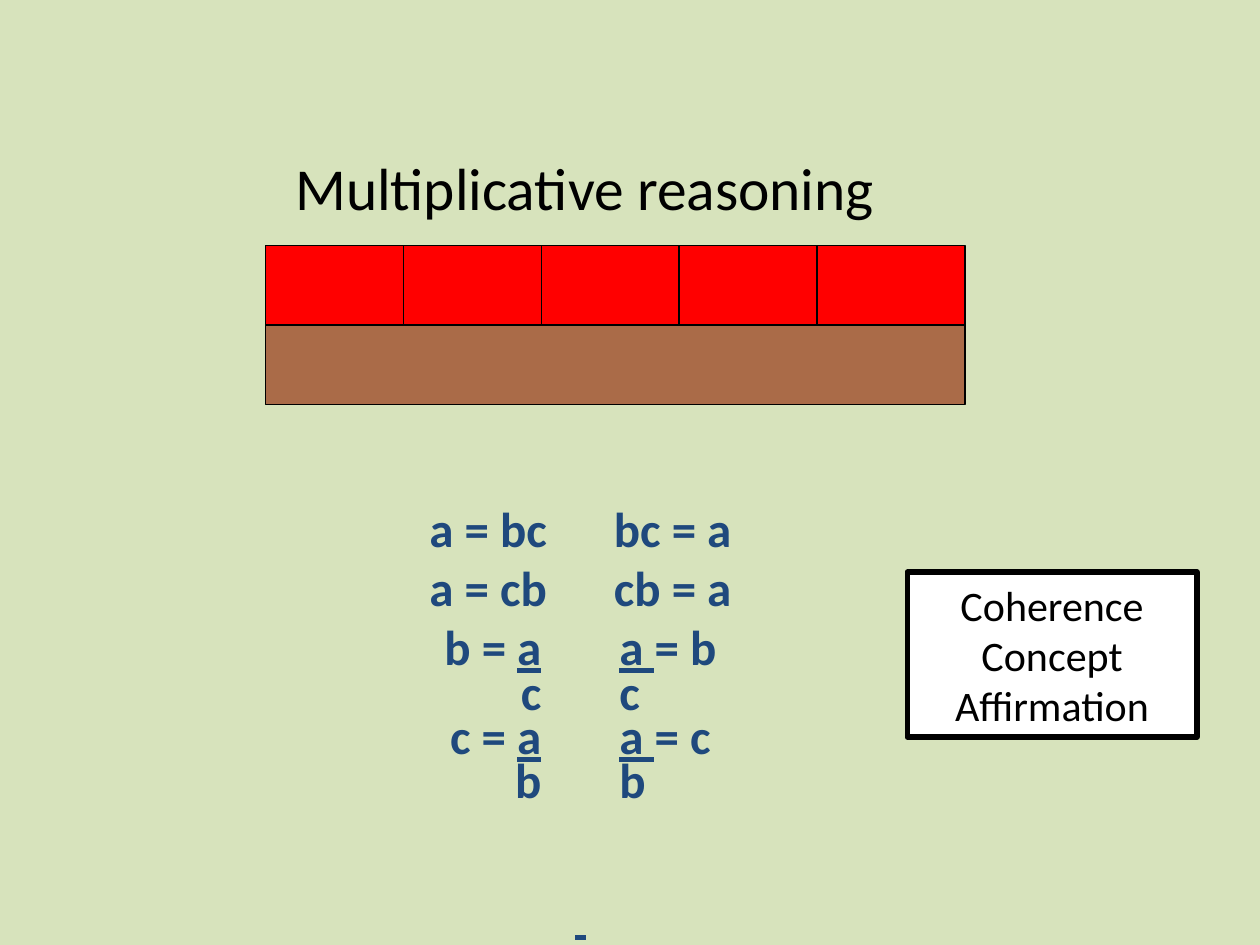
from dataclasses import dataclass

from lxml import etree
from pptx import Presentation
from pptx.dml.color import RGBColor
from pptx.enum import shapes, text
from pptx.oxml import ns
from pptx.util import Pt


@dataclass(frozen=True)
class Theme:
    font: str = "Calibri"
    back: str = "D7E3BC"
    ink: str = "000000"
    math: str = "1F497D"
    red: str = "FF0000"
    brown: str = "AA6B48"
    white: str = "FFFFFF"
    title: int = 34
    sums: int = 28
    note: int = 24


THEME = Theme()
MID = 172.8  # centre of the equations, from the text's left edge
NEAR, FAR = 19.2, 22.3  # half gap between the columns

# (left side, right side, half gap, line spacing); underscores mark underlines
SUMS = [
    ("a = bc", "bc = a", NEAR, 1),
    ("a = cb", "cb = a", NEAR, 1),
    ("b = _a_", "_a _= b", FAR, 1),
    ("c", "c", FAR, 0.75),
    ("c = _a_", "_a _= c", FAR, 0.75),
    ("b", "b", FAR, 0.75),
]


def color(code):
    return RGBColor.from_string(code)


def style(para, size, ink, bold=False):
    font = para.font
    font.name, font.size, font.bold = THEME.font, Pt(size), bold
    font.color.rgb = color(ink)


def add_runs(para, line):
    """Add runs, underlining every part that stands between underscores."""
    for i, part in enumerate(line.split("_")):
        if part:
            run = para.add_run()
            run.text = part
            if i % 2:
                run.font.underline = True


def add_tabs(para, stops):
    props = para._p.get_or_add_pPr()
    tabs = etree.SubElement(props, ns.qn("a:tabLst"))
    for pos, align in stops:
        etree.SubElement(tabs, ns.qn("a:tab"), pos=str(Pt(pos)), algn=align)


def add_text(slide, left, top, width, height):
    frame = slide.shapes.add_textbox(
        Pt(left), Pt(top), Pt(width), Pt(height)).text_frame
    frame.word_wrap = True
    return frame


def add_box(slide, left, top, width, height, fill, line=0.75):
    box = slide.shapes.add_shape(
        shapes.MSO_SHAPE.RECTANGLE, Pt(left), Pt(top), Pt(width), Pt(height))
    box.shadow.inherit = False
    box.fill.solid()
    box.fill.fore_color.rgb = color(fill)
    box.line.color.rgb = color(THEME.ink)
    box.line.width = Pt(line)
    return box


def add_title(slide):
    frame = add_text(slide, 25.2, 77, 617.8, 59.8)
    frame.vertical_anchor = text.MSO_ANCHOR.MIDDLE
    para = frame.paragraphs[0]
    para.text = "Multiplicative reasoning"
    para.alignment = text.PP_ALIGN.CENTER
    style(para, THEME.title, THEME.ink)


def add_bars(slide):
    left, top, high, step = 151.8, 140.4, 45.4, 78.75
    add_box(slide, left, top + high, 399.6, high, THEME.brown)
    for i, width in enumerate([80.6] * 4 + [84.6]):
        add_box(slide, left + i * step, top, width, high, THEME.red)


def add_sums(slide):
    frame = add_text(slide, 151.8, 281.5, 360, 338.4)
    for i, (left, right, gap, space) in enumerate(SUMS):
        para = frame.add_paragraph() if i else frame.paragraphs[0]
        add_tabs(para, [(MID - gap, "r"), (MID + gap, "l")])
        para.line_spacing = space
        add_runs(para, f"\t{left}\t{right}")
        style(para, THEME.sums, THEME.math, bold=True)
    dash = frame.add_paragraph()
    dash.alignment = text.PP_ALIGN.CENTER
    dash.line_spacing = 0.75
    dash.space_before = Pt(51.3)
    add_runs(dash, "_ _")
    style(dash, THEME.sums, THEME.math, bold=True)


def add_note(slide):
    box = add_box(slide, 518.4, 326.9, 165.6, 94.3, THEME.white, 3)
    frame = box.text_frame
    frame.text = "Coherence\nConcept\nAffirmation"
    for para in frame.paragraphs:
        para.alignment = text.PP_ALIGN.CENTER
        style(para, THEME.note, THEME.ink)


def main():
    deck = Presentation()
    deck.slide_width, deck.slide_height = Pt(720), Pt(540)
    slide = deck.slides.add_slide(deck.slide_layouts[6])
    slide.background.fill.solid()
    slide.background.fill.fore_color.rgb = color(THEME.back)
    add_title(slide)
    add_bars(slide)
    add_sums(slide)
    add_note(slide)
    deck.save("out.pptx")


if __name__ == "__main__":
    main()
